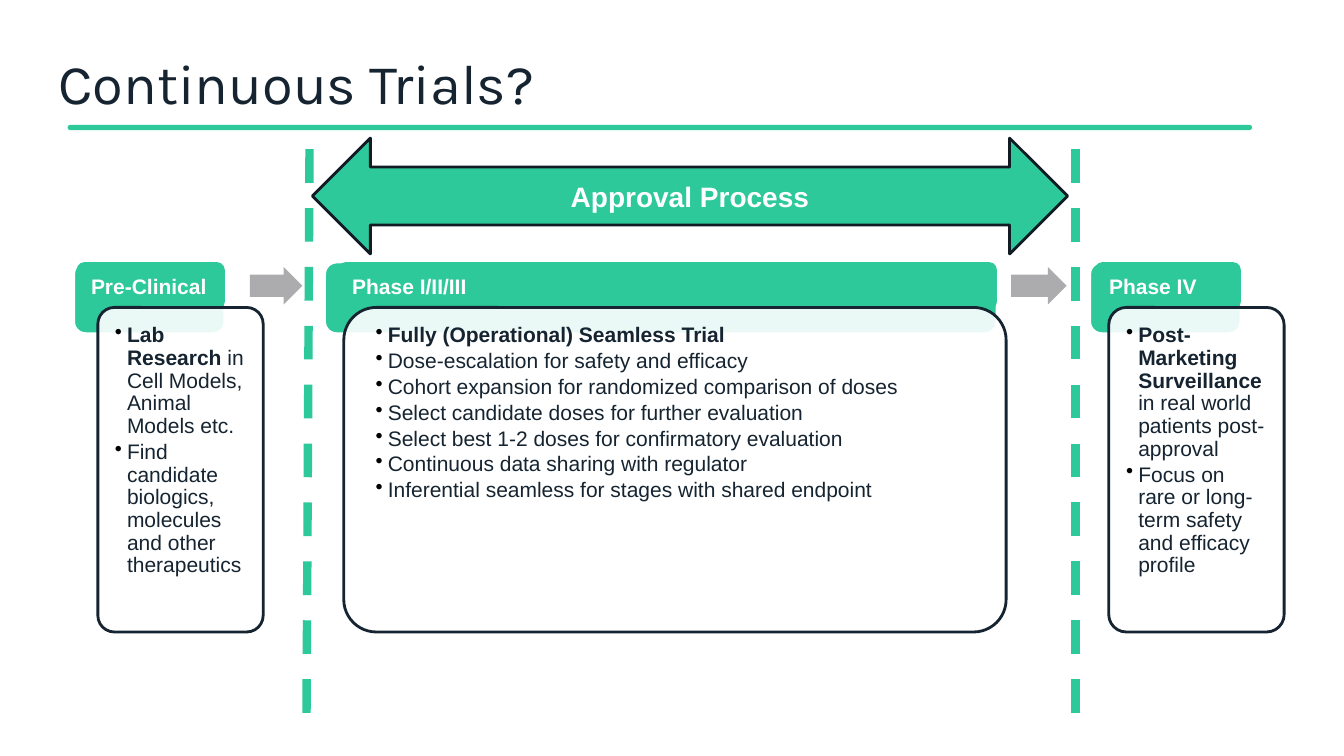
from dataclasses import dataclass

from lxml import etree
from pptx import Presentation
from pptx import util as u
from pptx.dml.color import RGBColor
from pptx.enum import dml, shapes, text
from pptx.oxml import ns

# Content: a "*" at the start of a text run marks it bold
TITLE = "Continuous Trials?"
PROCESS = "Approval Process"
# Horizontal places are percentages of the slide's width
STAGES = [
    dict(label="Pre-Clinical", tab=5.48, tab_width=11.25, label_left=5.7,
         card=7.28, card_width=12.3,
         points=[["*Lab Research ", "in Cell Models, Animal Models etc."],
                 ["Find candidate biologics, molecules and other therapeutics"]]),
    dict(label="Phase I/II/III", tab=24.15, tab_width=50.03, label_left=25.13,
         card=25.58, card_width=49.28,
         points=[["*Fully (Operational) Seamless Trial"],
                 ["Dose-escalation for safety and efficacy"],
                 ["Cohort expansion for randomized comparison of doses"],
                 ["Select candidate doses for further evaluation"],
                 ["Select best 1-2 doses for confirmatory evaluation"],
                 ["Continuous data sharing with regulator"],
                 ["Inferential seamless for stages with shared endpoint"]]),
    dict(label="Phase IV", tab=81.08, tab_width=11.25, label_left=81.45,
         card=82.5, card_width=13.05,
         points=[["*Post-Marketing Surveillance ",
                  "in real world patients post-approval"],
                 ["Focus on rare or long-term safety and efficacy profile"]]),
]
STEP_ARROWS = [(18.6, 3.9), (75.23, 4.13)]  # left, width
DIVIDERS = [(23.03, 22.8), (80.03, 80.03)]  # top end, bottom end

# Rows: top and height as percentages of the slide's height
TITLE_ROW = (5.07, 10.4)
RULE_ROW = (16.53, 0.67)
PROCESS_ROW = (18.27, 15.33)
TAB_ROW = (34.67, 9.47)
LABEL_ROW = (34.67, 6.27)
STEP_ROW = (35.33, 4.93)
CARD_ROW = (40.67, 42.93)
POINTS_ROW = (41.33, 41.6)
DIVIDER_ENDS = (19.73, 97.2)


@dataclass(frozen=True)
class Theme:
    green: str = "2EC99B"
    ink: str = "152430"
    outline: str = "101B24"
    grey: str = "ACACAE"
    white: str = "FFFFFF"
    bullet: str = "000000"
    title_font: str = "Karla"
    body_font: str = "Arial"
    title_size: int = 40
    process_size: int = 20
    body_size: int = 15
    line: int = 2
    divider: int = 6


theme = Theme()
deck = Presentation()
deck.slide_width, deck.slide_height = u.Inches(13.33), u.Inches(7.5)
page = deck.slides.add_slide(deck.slide_layouts[5])


def across(share):
    return round(deck.slide_width * share / 100)


def down(share):
    return round(deck.slide_height * share / 100)


def place(left, width, row):
    return across(left), down(row[0]), across(width), down(row[1])


def colour(value):
    return RGBColor.from_string(value)


def add_block(preset, area, fill, line=None, adjust=(), opacity=None):
    block = page.shapes.add_shape(preset, *area)
    block.shadow.inherit = False
    block.fill.solid()
    block.fill.fore_color.rgb = colour(fill)
    if opacity:
        shade = block.fill._xPr.find(".//" + ns.qn("a:srgbClr"))
        etree.SubElement(shade, ns.qn("a:alpha"), val=str(opacity * 1000))
    if line:
        block.line.color.rgb = colour(line)
        block.line.width = u.Pt(theme.line)
    else:
        block.line.fill.background()
    for index, value in enumerate(adjust):
        block.adjustments[index] = value
    return block


def add_bullet(para):
    props = para._p.get_or_add_pPr()
    indent = u.Inches(0.12)
    props.set("marL", str(indent))
    props.set("indent", str(-indent))
    tint = etree.SubElement(props, ns.qn("a:buClr"))
    etree.SubElement(tint, ns.qn("a:srgbClr"), val=theme.bullet)
    etree.SubElement(props, ns.qn("a:buChar"), char="•")


def write(box, paragraphs, size, ink, font=theme.body_font, bold=False, insets=None,
          anchor=text.MSO_ANCHOR.TOP, align=text.PP_ALIGN.LEFT, spacing=0.9,
          after=0, bullets=False):
    """Fill a shape with paragraphs, each a list of runs."""
    frame = box.text_frame
    frame.word_wrap = True
    frame.auto_size = text.MSO_AUTO_SIZE.NONE
    frame.vertical_anchor = anchor
    if insets:
        (frame.margin_left, frame.margin_top,
         frame.margin_right, frame.margin_bottom) = map(u.Inches, insets)
    for index, runs in enumerate(paragraphs):
        para = frame.add_paragraph() if index else frame.paragraphs[0]
        para.alignment = align
        para.line_spacing = spacing
        para.space_before, para.space_after = u.Pt(0), u.Pt(after)
        if bullets:
            add_bullet(para)
        for content in runs:
            span = para.add_run()
            span.text = content.removeprefix("*")
            span.font.name, span.font.size = font, u.Pt(size)
            span.font.bold = bold or content.startswith("*")
            span.font.color.rgb = colour(ink)


def add_stage(stage):
    rounded = shapes.MSO_SHAPE.ROUNDED_RECTANGLE
    add_block(rounded, place(stage["tab"], stage["tab_width"], TAB_ROW),
              theme.green, theme.white)
    label_width = stage["tab"] + stage["tab_width"] - stage["label_left"]
    label = add_block(rounded, place(stage["label_left"], label_width, LABEL_ROW),
                      theme.green)
    write(label, [[stage["label"]]], theme.body_size, theme.white, bold=True,
          insets=(0.12, 0.12, 0.12, 0.06))
    add_block(rounded, place(stage["card"], stage["card_width"], CARD_ROW),
              theme.white, theme.ink, adjust=[0.1], opacity=90)
    margin = stage["card_width"] * 0.03
    points = page.shapes.add_textbox(
        *place(stage["card"] + margin, stage["card_width"] - 2 * margin, POINTS_ROW))
    write(points, stage["points"], theme.body_size, theme.ink,
          insets=[0.12] * 4, after=2.25, bullets=True)


def add_divider(top_end, bottom_end):
    divider = page.shapes.add_connector(
        shapes.MSO_CONNECTOR.STRAIGHT, across(top_end), down(DIVIDER_ENDS[0]),
        across(bottom_end), down(DIVIDER_ENDS[1]))
    divider.line.color.rgb = colour(theme.green)
    divider.line.width = u.Pt(theme.divider)
    divider.line.dash_style = dml.MSO_LINE.DASH
    etree.SubElement(divider._element.spPr, ns.qn("a:effectLst"))


title = page.shapes.title
title.left, title.top, title.width, title.height = place(4.35, 91.2, TITLE_ROW)
write(title, [[TITLE]], theme.title_size, theme.ink, font=theme.title_font,
      insets=[0] * 4, anchor=text.MSO_ANCHOR.BOTTOM)
add_block(shapes.MSO_SHAPE.ROUNDED_RECTANGLE, place(5.03, 88.13, RULE_ROW),
          theme.green, adjust=[0.5])

for stage in STAGES:
    add_stage(stage)
for left, width in STEP_ARROWS:
    add_block(shapes.MSO_SHAPE.RIGHT_ARROW, place(left, width, STEP_ROW),
              theme.grey, adjust=[0.6, 0.5])

process = add_block(shapes.MSO_SHAPE.LEFT_RIGHT_ARROW, place(23.25, 56.18, PROCESS_ROW),
                    theme.green, theme.outline)
write(process, [[PROCESS]], theme.process_size, theme.white, bold=True, spacing=1.0,
      anchor=text.MSO_ANCHOR.MIDDLE, align=text.PP_ALIGN.CENTER)
for ends in DIVIDERS:
    add_divider(*ends)

deck.save("out.pptx")
